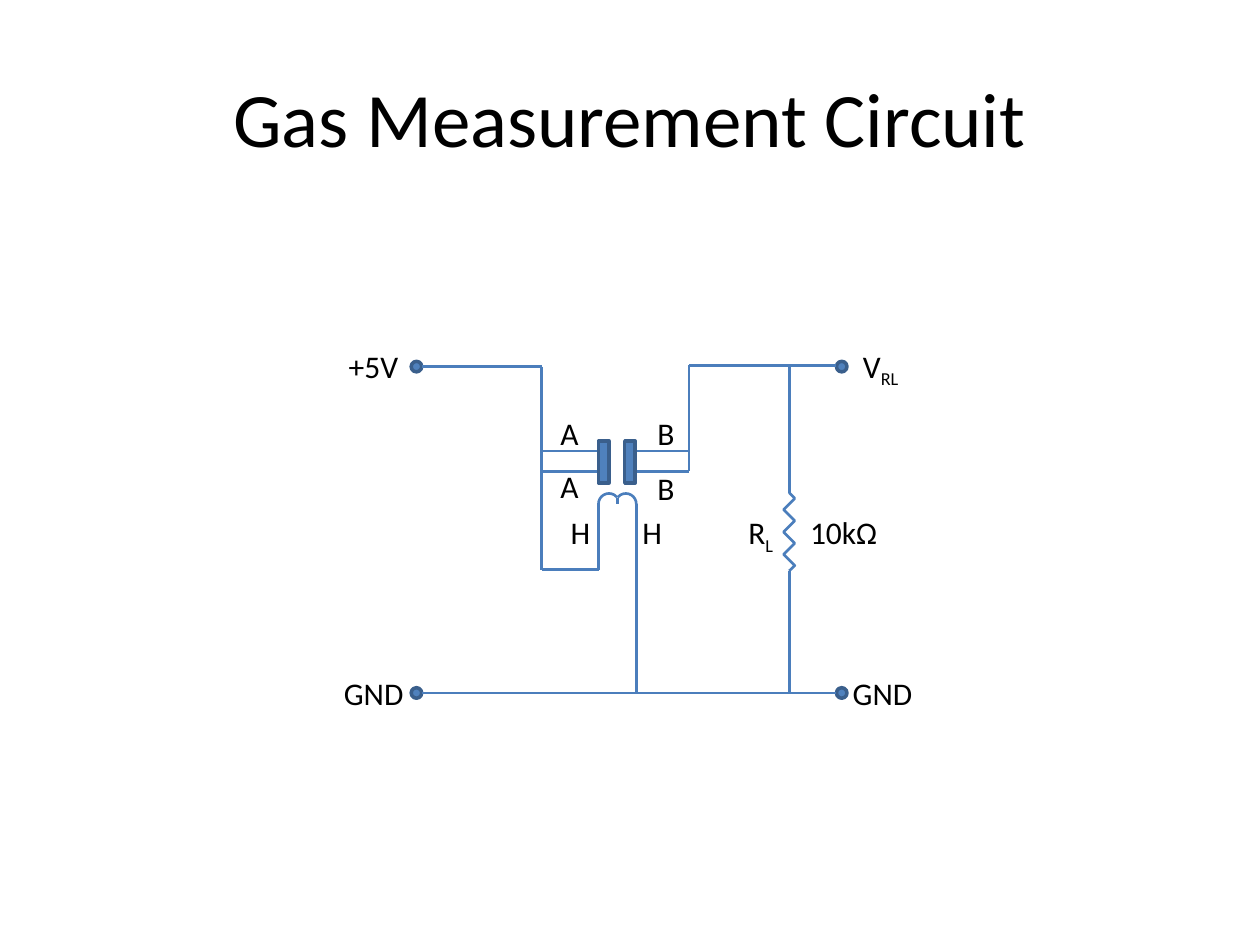
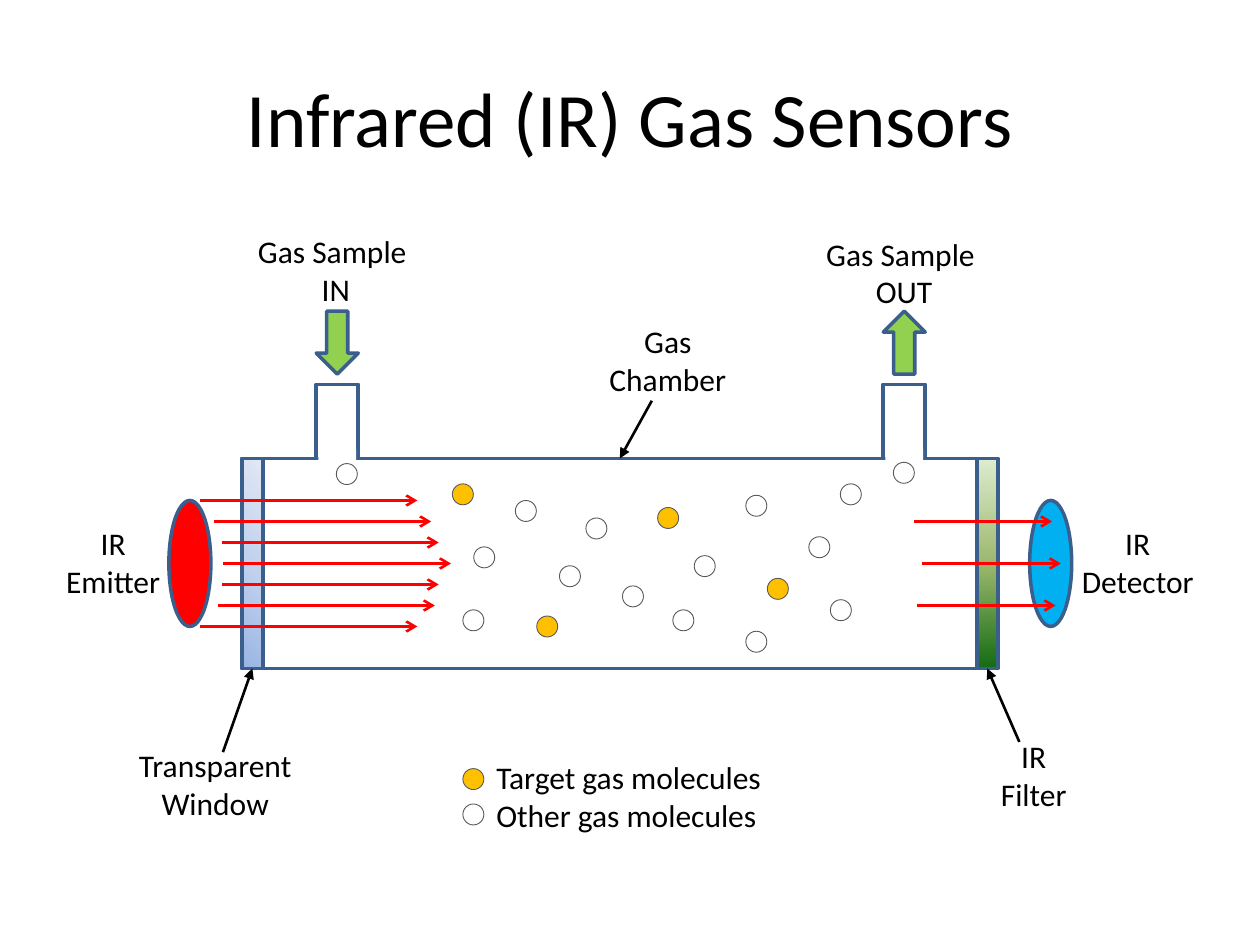
from lxml.etree import SubElement
from pptx import Presentation
from pptx.dml.color import RGBColor
from pptx.enum.shapes import MSO_CONNECTOR, MSO_SHAPE
from pptx.enum.text import MSO_ANCHOR, MSO_AUTO_SIZE, PP_ALIGN
from pptx.oxml.ns import qn
from pptx.util import Pt

# Shared style
FONT = "Calibri"
BLACK = RGBColor(0x00, 0x00, 0x00)
WHITE = RGBColor(0xFF, 0xFF, 0xFF)
BLUE = RGBColor(0x4F, 0x81, 0xBD)
OUTLINE = RGBColor(0x3A, 0x5F, 0x8C)
WIRE = RGBColor(0x4B, 0x7E, 0xBC)
RED = RGBColor(0xFF, 0x00, 0x00)
SKY = RGBColor(0x00, 0xB0, 0xF0)
GREEN = RGBColor(0x92, 0xD0, 0x50)
AMBER = RGBColor(0xFF, 0xC0, 0x00)
GREY = RGBColor(0x59, 0x59, 0x59)
WINDOW_STOPS = (RGBColor(0x9A, 0xB5, 0xE4), RGBColor(0xC2, 0xD1, 0xED), RGBColor(0xE1, 0xE8, 0xF5))
FILTER_STOPS = (RGBColor(0xDD, 0xEB, 0xCF), RGBColor(0x9C, 0xB8, 0x6E), RGBColor(0x15, 0x6B, 0x13))


class Deck:
    def __init__(self):
        self.prs = Presentation()
        self.prs.slide_width, self.prs.slide_height = Pt(720), Pt(540)
        self.slide = None

    def new_slide(self, heading):
        self.slide = self.prs.slides.add_slide(self.prs.slide_layouts[5])
        title = self.slide.shapes.title
        title.left, title.top, title.width, title.height = Pt(36), Pt(21.6), Pt(648), Pt(90)
        title.text_frame.text = heading
        title.text_frame.vertical_anchor = MSO_ANCHOR.MIDDLE
        title.text_frame.paragraphs[0].alignment = PP_ALIGN.CENTER
        self.style_runs(title.text_frame, 44)

    def style_runs(self, frame, size):
        for paragraph in frame.paragraphs:
            for run in paragraph.runs:
                run.font.name, run.font.size = FONT, Pt(size)
                run.font.color.rgb = BLACK

    def label(self, x, y, width, text, subscript="", align=PP_ALIGN.LEFT):
        height = 51 if "\n" in text else 29
        frame = self.slide.shapes.add_textbox(Pt(x), Pt(y), Pt(width), Pt(height)).text_frame
        frame.word_wrap = False
        frame.auto_size = MSO_AUTO_SIZE.SHAPE_TO_FIT_TEXT
        frame.text = text
        for paragraph in frame.paragraphs:
            paragraph.alignment = align
        if subscript:
            run = frame.paragraphs[0].add_run()
            run.text = subscript
            run._r.get_or_add_rPr().set("baseline", "-25000")
        self.style_runs(frame, 18)

    def caption(self, x, y, width, text):
        self.label(x, y, width, text, align=PP_ALIGN.CENTER)

    def finish(self, shape, fill, line, weight):
        shape.shadow.inherit = False
        if fill is None:
            shape.fill.background()
        else:
            shape.fill.solid()
            shape.fill.fore_color.rgb = fill
        if line is None:
            shape.line.fill.background()
        else:
            shape.line.color.rgb = line
            shape.line.width = Pt(weight)
        return shape

    def shape(self, kind, x, y, width, height, fill=None, line=OUTLINE, weight=2):
        shape = self.slide.shapes.add_shape(kind, Pt(x), Pt(y), Pt(width), Pt(height))
        return self.finish(shape, fill, line, weight)

    def gradient(self, shape, colors, radial=False):
        shape.fill.gradient()
        grad = shape._element.spPr.find(qn("a:gradFill"))
        for child in list(grad):
            grad.remove(child)
        stops = SubElement(grad, qn("a:gsLst"))
        for i, color in enumerate(colors):
            stop = SubElement(stops, qn("a:gs"), pos=str(50000 * i))
            SubElement(stop, qn("a:srgbClr"), val=str(color))
        if radial:
            circle = SubElement(grad, qn("a:path"), path="circle")
            SubElement(circle, qn("a:fillToRect"), t="100000", r="100000")
        else:
            SubElement(grad, qn("a:lin"), ang="5400000", scaled="0")

    def arc(self, x, y, size, start, end):
        arc = self.shape(MSO_SHAPE.ARC, x, y, size, size, line=WIRE, weight=1.5)
        arc.adjustments[0], arc.adjustments[1] = start, end

    def polyline(self, points):
        builder = self.slide.shapes.build_freeform(Pt(points[0][0]), Pt(points[0][1]))
        builder.add_line_segments([(Pt(x), Pt(y)) for x, y in points[1:]], close=False)
        self.finish(builder.convert_to_shape(), None, WIRE, 1.5)

    def line(self, x1, y1, x2, y2, color=WIRE, head=None):
        line = self.slide.shapes.add_connector(
            MSO_CONNECTOR.STRAIGHT, Pt(x1), Pt(y1), Pt(x2), Pt(y2))
        line.line.color.rgb = color
        line.line.width = Pt(1.5)
        if head:
            SubElement(line.line._get_or_add_ln(), qn("a:tailEnd"), type=head)
        SubElement(line._element.spPr, qn("a:effectLst"))
        return line

    def pointer(self, x, y, target, side):
        pointer = self.line(x, y, x, y, BLACK, "triangle")
        pointer.end_connect(target, side)


def build_circuit(deck):
    deck.new_slide("Gas Measurement Circuit")
    supply_y, output_y, ground_y = 209.5, 208.8, 396
    input_x, output_x = 238, 481
    left_bus, right_bus, load_x = 309.6, 393.8, 451
    coil_left, coil_right, coil_y, return_y = 342, 363.6, 288, 325.5
    upper_pin, lower_pin = 257.8, 269.3
    resistor_top, resistor_bottom = 281.5, 326.2

    # Terminals
    for x in (input_x, output_x):
        for y in (supply_y, ground_y):
            deck.shape(MSO_SHAPE.OVAL, x - 3, y - 3, 6, 6, BLUE)

    # Supply, output and ground wires
    deck.line(input_x + 3, supply_y, left_bus, supply_y)
    deck.line(left_bus, supply_y, left_bus, return_y)
    deck.line(right_bus, output_y, right_bus, lower_pin)
    deck.line(right_bus, output_y, output_x - 3, output_y)
    deck.line(input_x + 3, ground_y, output_x - 3, ground_y)

    # Sensor pins and plates
    for y in (upper_pin, lower_pin):
        deck.line(left_bus, y, coil_left, y)
        deck.line(361, y, right_bus, y)
    for x in (342, 357):
        deck.shape(MSO_SHAPE.RECTANGLE, x, 252, 6, 24, BLUE)

    # Heater coil
    deck.line(left_bus, return_y, coil_left, return_y)
    deck.line(coil_left, return_y, coil_left, coil_y)
    deck.line(coil_right, ground_y, coil_right, coil_y)
    deck.arc(342, 282, 12, 105.36, 191.94)
    deck.arc(351.6, 282, 12, 131.21, 0)
    deck.line(352.8, 284.4, 352.8, coil_y)

    # Load resistor
    zigzag = [(load_x + (-3.2 if i % 2 else 3.2), 284.8 + 6.4 * i) for i in range(7)]
    deck.polyline([(load_x, resistor_top), *zigzag, (load_x, resistor_bottom)])
    deck.line(load_x, resistor_top, load_x, supply_y)
    deck.line(load_x, ground_y, load_x, resistor_bottom)

    # Labels
    for x, y, width, text, subscript in (
            (192.2, 195, 43, "+5V", ""), (486, 194.5, 37, "V", "RL"),
            (189.4, 381.6, 49, "GND", ""), (480.2, 381.6, 49, "GND", ""),
            (313.2, 233.3, 25, "A", ""), (313.2, 263.5, 25, "A", ""),
            (368.6, 233.3, 24.5, "B", ""), (368.6, 264.2, 24.5, "B", ""),
            (319, 289.4, 26, "H", ""), (360, 289.4, 26, "H", ""),
            (420.5, 289.4, 29.5, "R", "L"), (455.8, 289.4, 53, "10kΩ", "")):
        deck.label(x, y, width, text, subscript)


def build_infrared(deck):
    deck.new_slide("Infrared (IR) Gas Sensors")
    inlet_x, outlet_x, pipe_width = 180.7, 504.7, 24
    chamber_x, chamber_y, chamber_width, chamber_height = 138.2, 262, 432, 120
    pane = 12

    # Chamber with its two pipes
    for x in (inlet_x, outlet_x):
        deck.shape(MSO_SHAPE.RECTANGLE, x, 219.6, pipe_width, 48, WHITE)
    chamber = deck.shape(MSO_SHAPE.RECTANGLE, chamber_x, chamber_y,
                         chamber_width, chamber_height, WHITE)
    for x in (inlet_x, outlet_x):
        deck.shape(MSO_SHAPE.RECTANGLE, x + 1.2, 256.8, pipe_width - 2.4, 6.5, WHITE, line=None)

    # Window and filter
    window, ir_filter = (
        deck.shape(MSO_SHAPE.RECTANGLE, x, chamber_y, pane, chamber_height, WHITE)
        for x in (chamber_x, chamber_x + chamber_width - pane))
    deck.gradient(window, WINDOW_STOPS, radial=True)
    deck.gradient(ir_filter, FILTER_STOPS)

    # Emitter, detector and flow arrows
    deck.shape(MSO_SHAPE.OVAL, 588.4, 286, 24, 72, SKY)
    deck.shape(MSO_SHAPE.OVAL, 96.5, 286, 24, 72, RED)
    deck.shape(MSO_SHAPE.DOWN_ARROW, inlet_x, 177.8, 24, 36, GREEN)
    deck.shape(MSO_SHAPE.UP_ARROW, outlet_x, 177.8, 24, 36, GREEN)

    # Infrared rays
    emitted = ((114.5, 124), (122.4, 124), (126.7, 124), (127.4, 130.3),
               (126.7, 124), (124.5, 124), (114.5, 124))
    for i, (x, length) in enumerate(emitted):
        deck.line(x, 286 + 12 * i, x + length, 286 + 12 * i, RED, "arrow")
    for i, x in enumerate((522, 527, 524)):
        deck.line(x, 298 + 24 * i, x + 79.2, 298 + 24 * i, RED, "arrow")

    # Captions and pointers
    for x, y, width, text in (
            (139.7, 128.9, 104.4, "Gas Sample \nIN"), (464.4, 130.5, 104.4, "Gas Sample \nOUT"),
            (30.2, 295.9, 69, "IR\nEmitter"), (610.6, 295.9, 79, "IR\nDetector"),
            (72, 422.8, 102, "Transparent\nWindow"), (564.5, 417.6, 52.5, "IR\nFilter"),
            (340.6, 180.7, 82, "Gas\nChamber")):
        deck.caption(x, y, width, text)
    deck.pointer(127.4, 429.8, window, 2)
    deck.pointer(582.5, 424, ir_filter, 2)
    deck.pointer(372.5, 229, chamber, 0)

    # Molecules, the last of each kind being its legend key
    targets = ((306.7, 352), (375.8, 290), (438.5, 330.5), (258.5, 276.5), (264.5, 439.2))
    others = ((294.5, 286), (319.7, 323.3), (334.8, 296), (355.7, 334.8), (396.7, 317.5),
              (426.2, 283), (384.5, 348.5), (426.2, 360.7), (462.2, 306.7), (474.5, 342.7),
              (270.7, 312.5), (264.5, 348.5), (480.2, 276.5), (192.2, 264.9), (510.5, 264.2),
              (264.5, 459.4))
    for fill, places in ((AMBER, targets), (None, others)):
        for x, y in places:
            deck.shape(MSO_SHAPE.OVAL, x, y, 12, 12, fill, GREY, 0.5)
    deck.label(276.5, 429.8, 168, "Target gas molecules\nOther gas molecules")


def main():
    deck = Deck()
    build_circuit(deck)
    build_infrared(deck)
    deck.prs.save("out.pptx")


if __name__ == "__main__":
    main()
